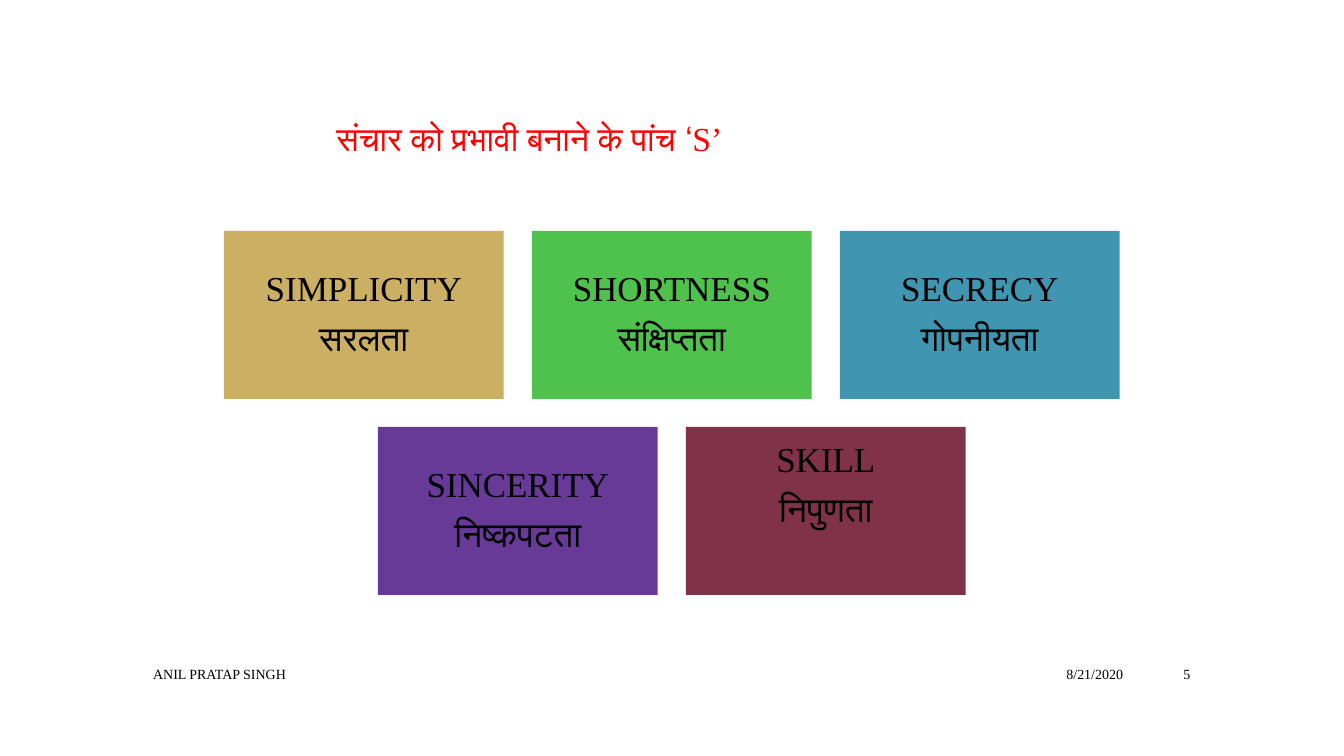
from dataclasses import dataclass

from pptx import Presentation
from pptx.dml.color import RGBColor
from pptx.enum.shapes import MSO_SHAPE
from pptx.enum.text import MSO_ANCHOR, PP_ALIGN
from pptx.util import Cm, Pt

RECT = MSO_SHAPE.RECTANGLE
TOP, MIDDLE = MSO_ANCHOR.TOP, MSO_ANCHOR.MIDDLE
LEFT, CENTER, RIGHT = PP_ALIGN.LEFT, PP_ALIGN.CENTER, PP_ALIGN.RIGHT


@dataclass(frozen=True)
class Theme:
    font: str = "Times New Roman"
    ink: str = "000000"
    title: str = "FF0000"
    cards: tuple = ("CBAF62", "4FC14D", "4096B0", "673A98", "803348")
    title_size: int = 24
    card_size: int = 25
    footer_size: int = 10


THEME = Theme()
COLUMNS = 3
# English word, Hindi word, bottom inset in cm
QUALITIES = [
    ("SIMPLICITY", "सरलता", 0.25),
    ("SHORTNESS", "संक्षिप्तता", 0.25),
    ("SECRECY", "गोपनीयता", 0.25),
    ("SINCERITY", "निष्कपटता", 0.25),
    ("SKILL", "निपुणता", 1.51),  # sits higher than the others
]


def write(tf, lines, size, color, align=LEFT, anchor=MIDDLE, **spacing):
    """Fill a text frame with one paragraph per line."""
    tf.word_wrap = True
    tf.vertical_anchor = anchor
    for i, text in enumerate(lines):
        p = tf.paragraphs[0] if i == 0 else tf.add_paragraph()
        for name, value in {"alignment": align, **spacing}.items():
            setattr(p, name, value)
        r = p.add_run()
        r.text = text
        for name, value in {"name": THEME.font, "size": Pt(size)}.items():
            setattr(r.font, name, value)
        r.font.color.rgb = RGBColor.from_string(color)


def add_text(s, box, text, size, color, **layout):
    tb = s.shapes.add_textbox(*(Cm(v) for v in box))
    write(tb.text_frame, [text], size, color, **layout)


def add_title(s, box):
    add_text(s, box, "संचार को प्रभावी बनाने के पांच ‘S’",
             THEME.title_size, THEME.title, anchor=TOP)


def add_card(s, box, lines, fill, bottom):
    sp = s.shapes.add_shape(RECT, *(Cm(v) for v in box))
    sp.shadow.inherit = False
    sp.fill.solid()
    sp.fill.fore_color.rgb = RGBColor.from_string(fill)
    sp.line.fill.background()
    tf = sp.text_frame
    insets = {"left": 0.25, "top": 0.25, "right": 0.25, "bottom": bottom}
    for side, value in insets.items():
        setattr(tf, f"margin_{side}", Cm(value))
    write(tf, lines, THEME.card_size, THEME.ink, align=CENTER,
          line_spacing=0.9, space_after=Pt(8.75))


def add_cards(s, box):
    """Rows of cards, each row centred; gap is a tenth of a card's width."""
    left, top, width = box
    card_w = width / (COLUMNS + 0.1 * (COLUMNS - 1))
    card_h, gap = 0.6 * card_w, 0.1 * card_w
    for i, (english, hindi, bottom) in enumerate(QUALITIES):
        row, col = divmod(i, COLUMNS)
        in_row = min(COLUMNS, len(QUALITIES) - row * COLUMNS)
        indent = (COLUMNS - in_row) * (card_w + gap) / 2
        x = left + indent + col * (card_w + gap)
        y = top + row * (card_h + gap)
        add_card(s, (x, y, card_w, card_h), (english, hindi),
                 THEME.cards[i], bottom)


def add_footer(s, box):
    left, top, width, height = box
    # offset from the left edge, width, text, alignment
    parts = [
        (0, 20.3, "ANIL PRATAP SINGH", LEFT),
        (width - 6.15, 4.45, "8/21/2020", RIGHT),
        (width - 1.5, 1.5, "5", RIGHT),
    ]
    for offset, part_w, text, align in parts:
        add_text(s, (left + offset, top, part_w, height), text,
                 THEME.footer_size, THEME.ink, align=align)


def main():
    prs = Presentation()
    prs.slide_width, prs.slide_height = Cm(33.87), Cm(19.05)
    s = prs.slides.add_slide(prs.slide_layouts[6])
    add_footer(s, (3.61, 16.59, 26.64, 0.79))
    add_title(s, (8.23, 2.84, 16.94, 3.07))
    add_cards(s, (5.64, 5.82, 22.58))
    prs.save("out.pptx")


if __name__ == "__main__":
    main()
